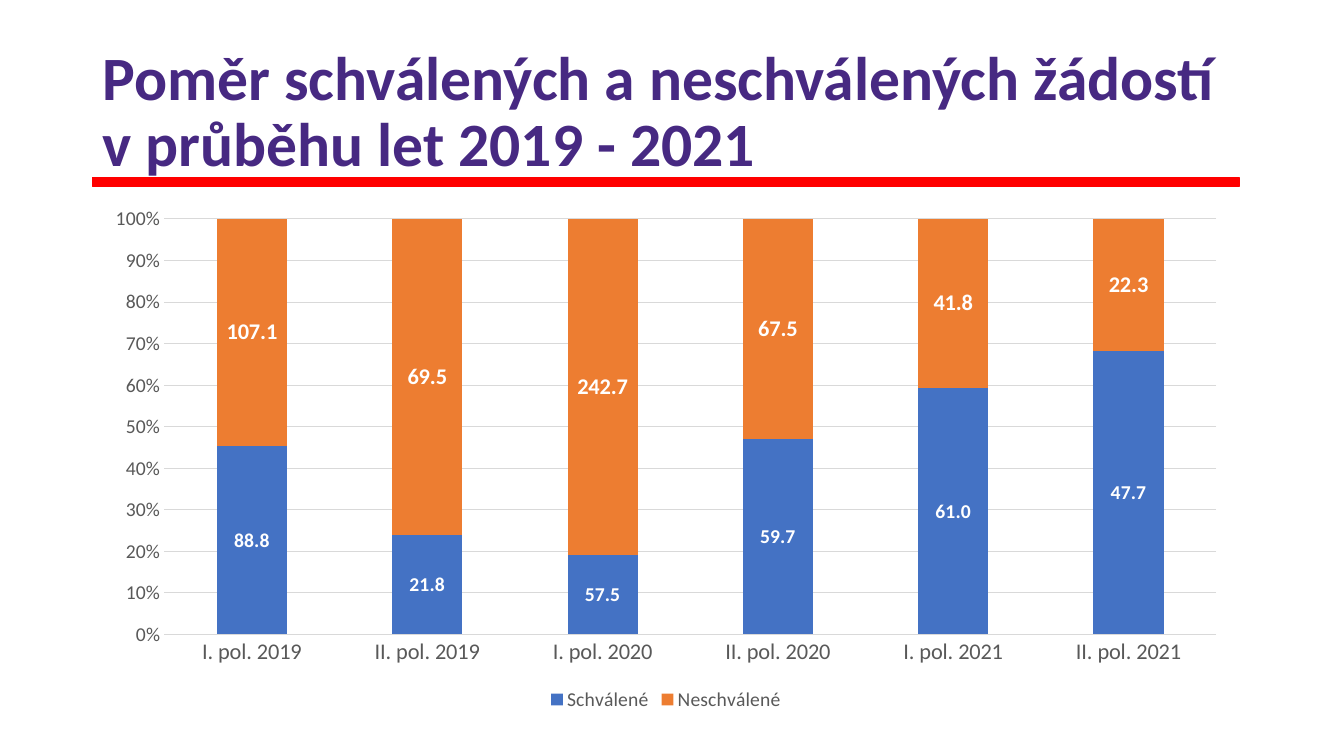
from dataclasses import dataclass

from lxml.etree import SubElement
from pptx import Presentation
from pptx.chart.data import CategoryChartData
from pptx.dml.color import RGBColor
from pptx.enum.chart import XL_CHART_TYPE, XL_LABEL_POSITION, XL_LEGEND_POSITION, XL_TICK_MARK
from pptx.enum.text import MSO_ANCHOR
from pptx.oxml.ns import qn
from pptx.util import Inches, Pt


@dataclass(frozen=True)
class Theme:
    """Colours, font and type sizes of the slide."""
    font: str = "Calibri"
    title: str = "472982"
    rule: str = "FF0000"
    grid: str = "D9D9D9"
    axis_text: str = "595959"
    label_text: str = "FFFFFF"
    title_size: int = 44
    category_size: int = 16
    value_size: int = 14
    legend_size: int = 14


THEME = Theme()
TITLE = "Poměr schválených a neschválených žádostí v průběhu let 2019 - 2021"
PERIODS = [f"{half}. pol. {year}" for year in (2019, 2020, 2021) for half in ("I", "II")]
SERIES = [
    ("Schválené", (88.8, 21.8, 57.5, 59.7, 61.0, 47.7), "4472C4", 14),
    ("Neschválené", (107.1, 69.5, 242.7, 67.5, 41.8, 22.3), "ED7D31", 16),
]


def style_font(font, size, color, bold=False):
    """Give a font the theme typeface with a size, colour and weight."""
    font.name = THEME.font
    font.size = Pt(size)
    font.bold = bold
    font.color.rgb = RGBColor.from_string(color)


def style_line(line, color, width):
    """Give a line a colour and a width in points."""
    line.color.rgb = RGBColor.from_string(color)
    line.width = Pt(width)


def add_title(slide, left, top, width, height):
    """Place the bold slide title, centred vertically in its box."""
    box = slide.shapes.add_textbox(Inches(left), Inches(top), Inches(width), Inches(height))
    frame = box.text_frame
    frame.word_wrap = True
    frame.vertical_anchor = MSO_ANCHOR.MIDDLE
    frame.text = TITLE
    para = frame.paragraphs[0]
    para.line_spacing = 0.9
    style_font(para.runs[0].font, THEME.title_size, THEME.title, True)


def add_rule(slide, left, top, width, height):
    """Place the solid bar under the title."""
    rule = slide.shapes.add_shape(1, Inches(left), Inches(top), Inches(width), Inches(height))
    rule.shadow.inherit = False
    rule.fill.solid()
    rule.fill.fore_color.rgb = RGBColor.from_string(THEME.rule)
    style_line(rule.line, THEME.rule, 1)


def style_axes(chart):
    """Format the period axis and the percentage axis."""
    periods, percent = chart.category_axis, chart.value_axis
    for axis, size in ((periods, THEME.category_size), (percent, THEME.value_size)):
        axis.major_tick_mark = axis.minor_tick_mark = XL_TICK_MARK.NONE
        style_font(axis.tick_labels.font, size, THEME.axis_text)
    style_line(periods.format.line, THEME.grid, 0.75)
    percent.format.line.fill.background()
    percent.minimum_scale, percent.maximum_scale, percent.major_unit = 0, 1, 0.1
    percent.tick_labels.number_format = "0%"
    percent.tick_labels.number_format_is_linked = False
    percent.has_major_gridlines = True
    style_line(percent.major_gridlines.format.line, THEME.grid, 0.75)


def style_series(series, color, label_size):
    """Fill one series and label its values."""
    series.format.fill.solid()
    series.format.fill.fore_color.rgb = RGBColor.from_string(color)
    series.invert_if_negative = False
    labels = series.data_labels
    labels.show_value = True
    labels.number_format = "0.0"
    labels.number_format_is_linked = False
    labels.position = XL_LABEL_POSITION.CENTER
    style_font(labels.font, label_size, THEME.label_text, True)


def add_ratio_chart(slide, left, top, width, height):
    """Place the stacked chart of approved and rejected requests."""
    data = CategoryChartData(number_format="0.0")
    data.categories = PERIODS
    for name, values, _, _ in SERIES:
        data.add_series(name, values)
    chart = slide.shapes.add_chart(
        XL_CHART_TYPE.COLUMN_STACKED_100,
        Inches(left), Inches(top), Inches(width), Inches(height), data,
    ).chart
    chart.has_title = False
    chart.font.name = THEME.font
    chart.has_legend = True
    chart.legend.position = XL_LEGEND_POSITION.BOTTOM
    chart.legend.include_in_layout = False
    style_font(chart.legend.font, THEME.legend_size, THEME.axis_text)
    style_axes(chart)
    plot = chart.plots[0]
    plot.gap_width, plot.overlap, plot.vary_by_categories = 150, 100, False
    for series, (_, _, color, label_size) in zip(plot.series, SERIES):
        style_series(series, color, label_size)


def main():
    """Build the deck and save it."""
    deck = Presentation()
    deck.slide_width, deck.slide_height = Inches(13.33), Inches(7.5)
    slide = deck.slides.add_slide(deck.slide_layouts[6])
    left, width = 0.92, 11.37
    add_title(slide, left, 0.4, 11.5, 1.45)
    add_rule(slide, left, 1.76, width, 0.09)
    add_ratio_chart(slide, left, 1.95, width, 5.15)
    deck.save("out.pptx")


if __name__ == "__main__":
    main()
